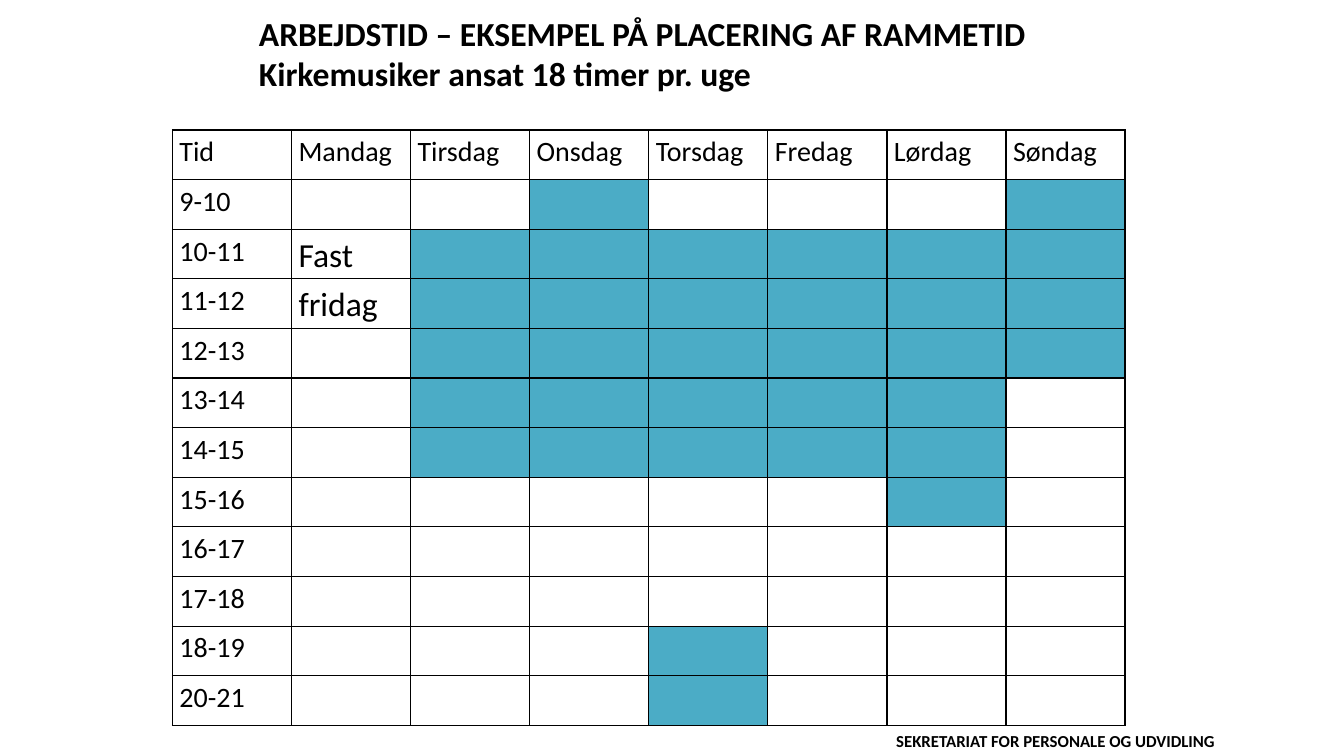
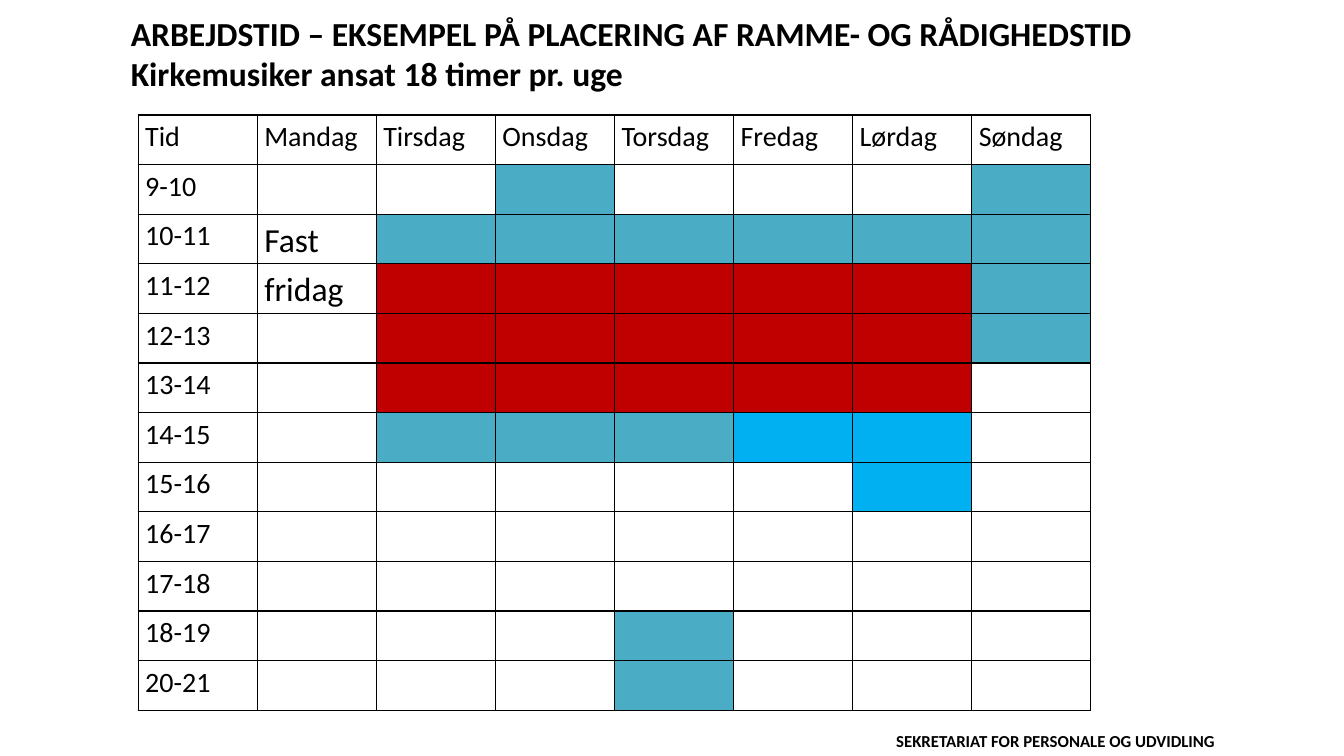
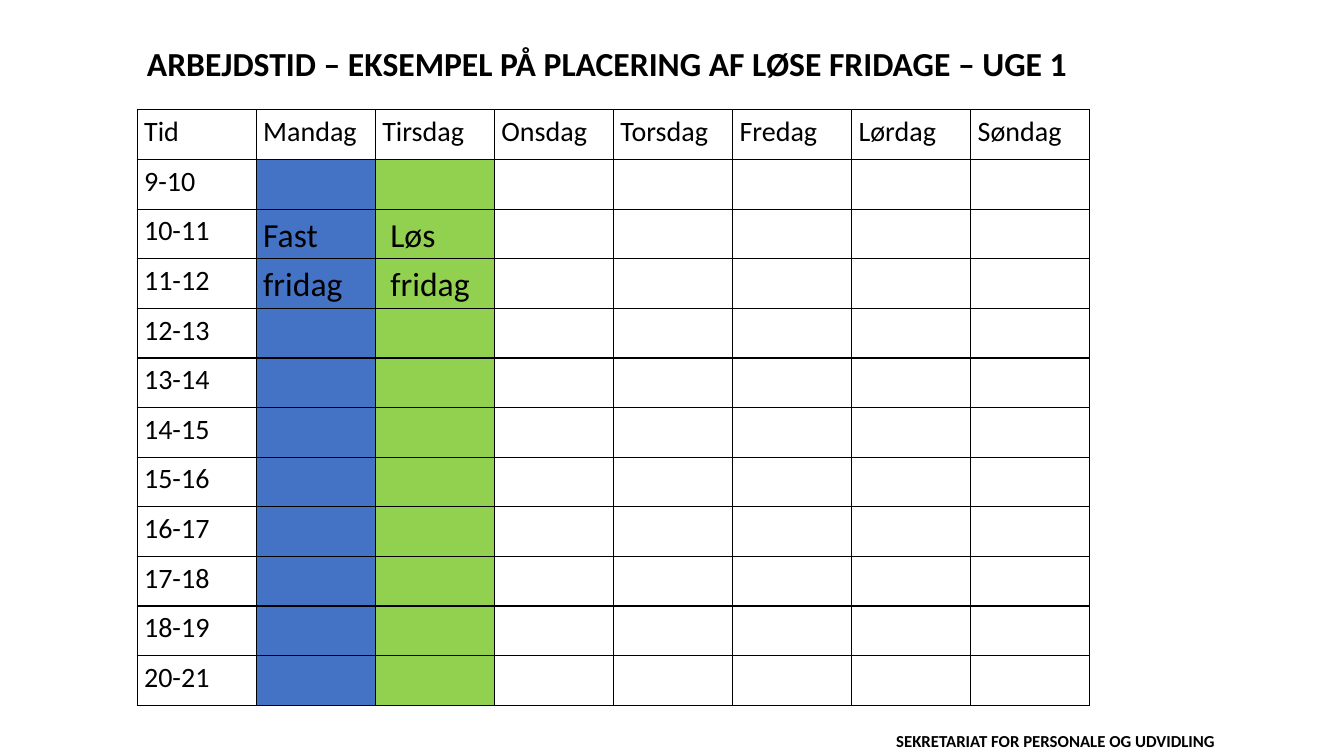
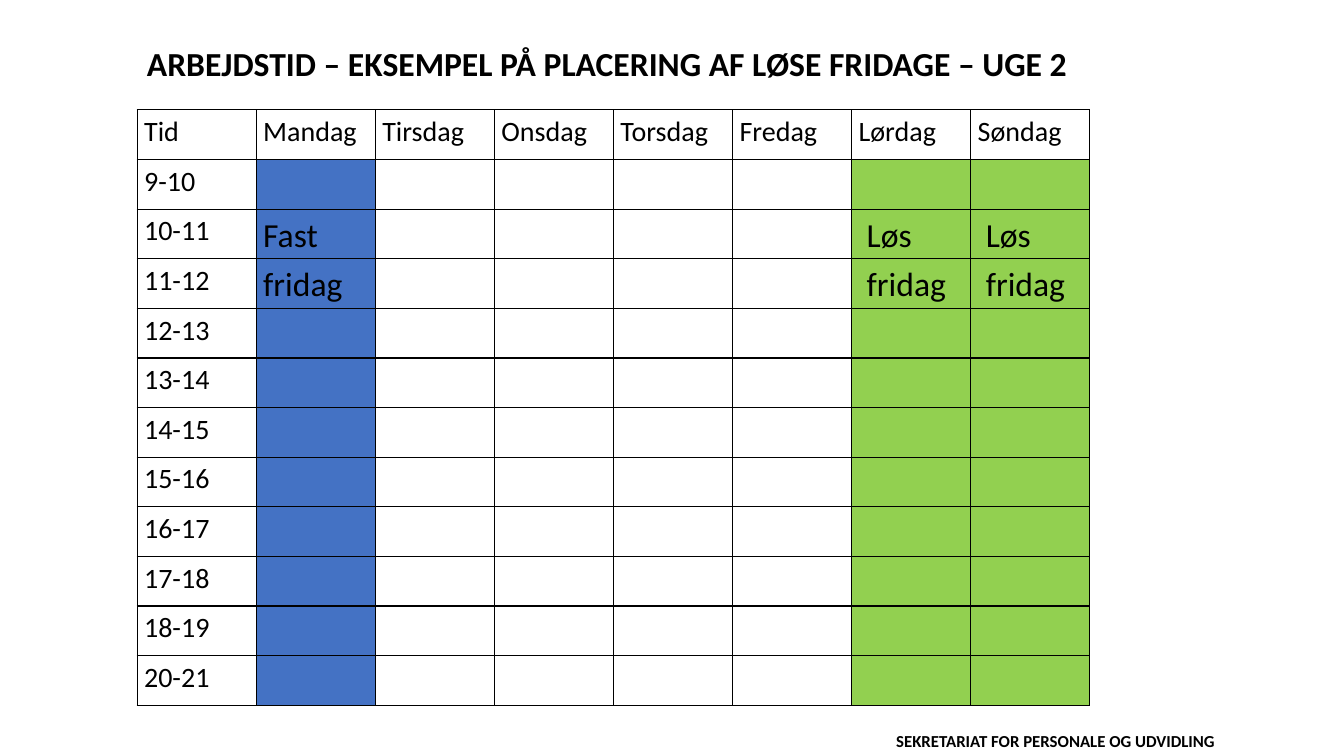
from dataclasses import dataclass

from lxml.etree import SubElement
from pptx import Presentation
from pptx.dml.color import RGBColor
from pptx.enum.text import MSO_AUTO_SIZE
from pptx.oxml.ns import qn
from pptx.slide import Slide
from pptx.table import _Cell as Cell
from pptx.text.text import TextFrame
from pptx.util import Inches, Pt

FONT = "Calibri"
COLORS = {
    "ink": "000000",
    "white": "FFFFFF",
    "teal": "4BACC6",
    "red": "C00000",
    "sky": "00B0F0",
    "blue": "4472C4",
    "green": "92D050",
}
# Letters that stand for cell fills in the week plans
CODES = {".": "white", "t": "teal", "r": "red", "s": "sky", "b": "blue", "g": "green"}

DAYS = ["Mandag", "Tirsdag", "Onsdag", "Torsdag", "Fredag", "Lørdag", "Søndag"]
HOURS = ["9-10", "10-11", "11-12", "12-13", "13-14", "14-15", "15-16",
         "16-17", "17-18", "18-19", "20-21"]
HEAD = ["Tid", *DAYS]
WIDTH, HEIGHT = 9.45, 5.91
PAD, INDENT = 0.07, 0.15
FOOTER = "SEKRETARIAT FOR PERSONALE OG UDVIDLING"


@dataclass
class Box:
    left: float
    top: float
    width: float
    height: float


@dataclass
class Plan:
    """One slide: a title and a week, with one row of fill codes per hour."""
    title: str
    place: Box
    left: float
    top: float
    fills: list[str]
    loose: tuple[str, ...] = ()


FOOT = Box(8.79, 7.2, 3.59, 0.3)
LINE = Box(1.36, 0.38, 9.73, 0.5)
STAFF = "Kirkemusiker ansat 18 timer pr. uge"
LOOSE = "ARBEJDSTID – EKSEMPEL PÅ PLACERING AF LØSE FRIDAGE – UGE"

PLANS = [
    Plan(f"ARBEJDSTID – EKSEMPEL PÅ PLACERING AF RAMMETID\n{STAFF}",
         Box(2.47, 0.08, 7.95, 0.91), 1.71, 1.29,
         ["..t...t", *[".tttttt"] * 3, *[".ttttt."] * 2, ".....t.",
          *["......."] * 2, *["...t..."] * 2]),
    Plan(f"ARBEJDSTID – EKSEMPEL PÅ PLACERING AF RAMME- OG RÅDIGHEDSTID\n{STAFF}",
         Box(1.2, 0.08, 10.47, 0.91), 1.37, 1.14,
         ["..t...t", ".tttttt", *[".rrrrrt"] * 2, ".rrrrr.", ".tttss.", ".....s.",
          *["......."] * 2, *["...t..."] * 2]),
    Plan(f"{LOOSE} 1", LINE, 1.36, 1.09, ["bg....."] * len(HOURS), ("Tirsdag",)),
    Plan(f"{LOOSE} 2", LINE, 1.36, 1.09, ["b....gg"] * len(HOURS), ("Lørdag", "Søndag")),
]


def style(frame: TextFrame, size: int, bold: bool = False) -> None:
    for par in frame.paragraphs:
        for run in par.runs:
            font = run.font
            font.name, font.size, font.bold = FONT, Pt(size), bold
            font.color.rgb = RGBColor.from_string(COLORS["ink"])


def label(slide: Slide, box: Box, text: str, size: int) -> None:
    shape = slide.shapes.add_textbox(Inches(box.left), Inches(box.top),
                                     Inches(box.width), Inches(box.height))
    frame = shape.text_frame
    frame.word_wrap = True
    frame.auto_size = MSO_AUTO_SIZE.SHAPE_TO_FIT_TEXT
    frame.text = text
    style(frame, size, bold=True)


def border(cell: Cell) -> None:
    """Draw a thin line on all four sides; call before the fill is set."""
    props = cell._tc.get_or_add_tcPr()
    for side in ("lnL", "lnR", "lnT", "lnB"):
        line = SubElement(props, qn(f"a:{side}"), w=str(Pt(1)))
        fill = SubElement(line, qn("a:solidFill"))
        SubElement(fill, qn("a:srgbClr"), val=COLORS["ink"])


def paint(cell: Cell, text: str, size: int, color: str, indent: float) -> None:
    border(cell)
    cell.fill.solid()
    cell.fill.fore_color.rgb = RGBColor.from_string(COLORS[color])
    cell.margin_left, cell.margin_right = Inches(indent), Inches(PAD)
    cell.margin_top = cell.margin_bottom = 0
    frame = cell.text_frame
    frame.text = text
    frame.paragraphs[0].line_spacing = 1.15
    style(frame, size)


def notes(plan: Plan) -> dict[tuple[str, str], str]:
    """Words for the days off, keyed by hour and day."""
    kinds = {"Mandag": "Fast"} | {day: "Løs" for day in plan.loose}
    words = {("10-11", day): kind for day, kind in kinds.items()}
    return words | {("11-12", day): "fridag" for day in kinds}


def week(slide: Slide, plan: Plan) -> None:
    rows, cols = len(HOURS) + 1, len(HEAD)
    table = slide.shapes.add_table(rows, cols, Inches(plan.left), Inches(plan.top),
                                   Inches(WIDTH), Inches(HEIGHT)).table
    table.first_row = table.horz_banding = False
    for col in table.columns:
        col.width = Inches(WIDTH / cols)
    for row in table.rows:
        row.height = Inches(HEIGHT / rows)

    for c, text in enumerate(HEAD):
        paint(table.cell(0, c), text, 20, "white", PAD)
    words = notes(plan)
    for r, (hour, codes) in enumerate(zip(HOURS, plan.fills), 1):
        paint(table.cell(r, 0), hour, 20, "white", PAD)
        for c, (day, code) in enumerate(zip(DAYS, codes), 1):
            indent = INDENT if day in plan.loose else PAD
            paint(table.cell(r, c), words.get((hour, day), ""), 24, CODES[code], indent)


def main() -> None:
    deck = Presentation()
    deck.slide_width, deck.slide_height = Inches(13.33), Inches(7.5)
    for plan in PLANS:
        slide = deck.slides.add_slide(deck.slide_layouts[6])
        label(slide, FOOT, FOOTER, 12)
        label(slide, plan.place, plan.title, 24)
        week(slide, plan)
    deck.save("out.pptx")


if __name__ == "__main__":
    main()
